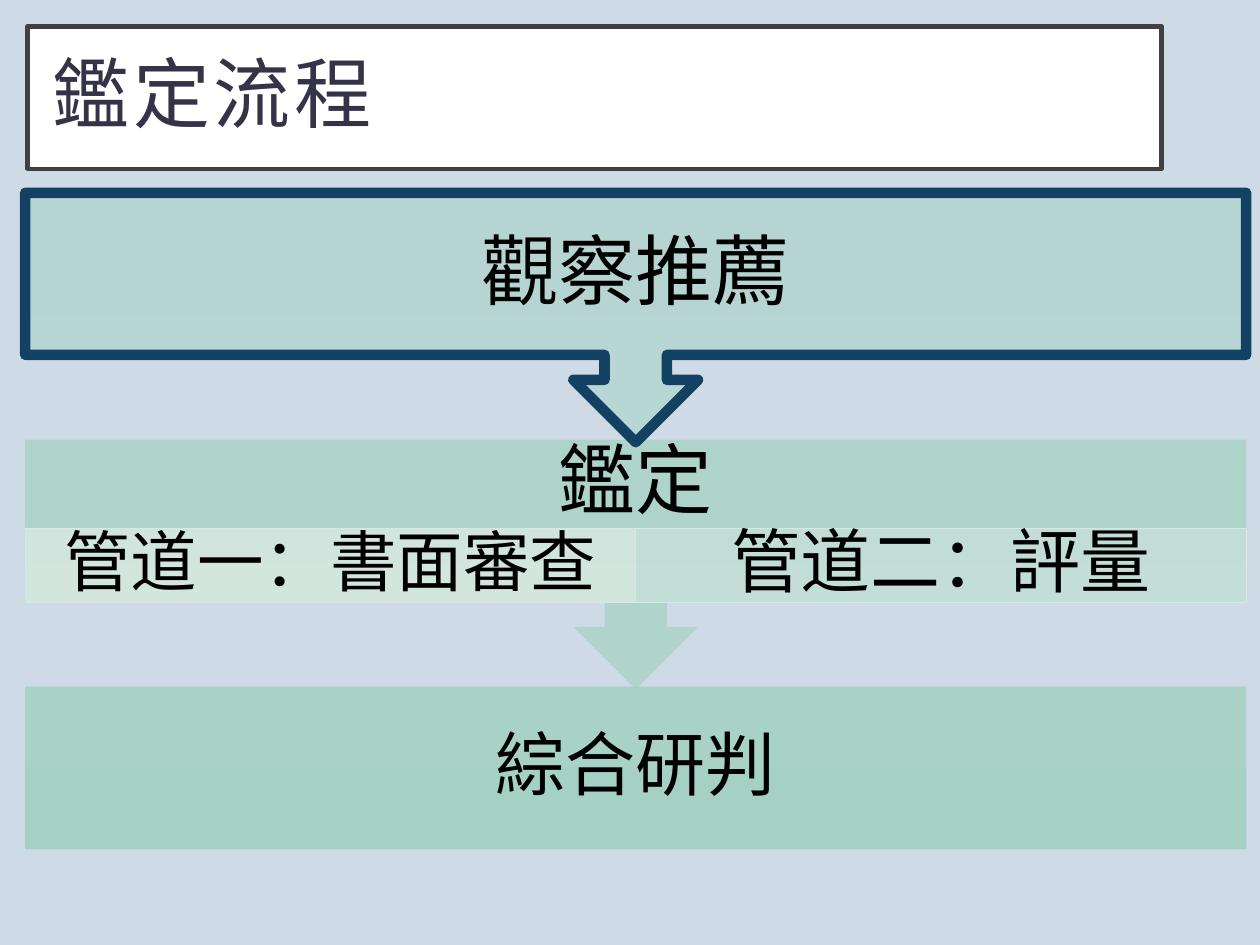
from lxml import etree
from pptx import Presentation
from pptx.dml.color import RGBColor
from pptx.enum import shapes, text
from pptx.oxml import ns
from pptx.util import Inches, Pt

LEFT, WIDTH = 0.2, 9.69
BAND_HEIGHT, CALLOUT_HEIGHT = 1.29, 1.98
STEP = 1.96
FIRST_TOP = 1.53
HALF = WIDTH / 2
GRADIENT = ("A4D2C2", "A0D1C0")
PALE = "D6E8E1"


def rgb(value):
    return RGBColor.from_string(value)


def set_opacity(shape, percent):
    for color in shape.element.spPr.iter(ns.qn("a:srgbClr")):
        etree.SubElement(color, ns.qn("a:alpha"), val=str(percent * 1000))


def set_outline(shape, color, width):
    shape.line.color.rgb = rgb(color)
    shape.line.width = Pt(width)


def add_block(slide, kind, place, colors, opacity=100):
    shape = slide.shapes.add_shape(kind, *map(Inches, place))
    shape.shadow.inherit = False
    if len(colors) == 1:
        shape.fill.solid()
        shape.fill.fore_color.rgb = rgb(colors[0])
    else:
        shape.fill.gradient()
        shape.fill.gradient_angle = 270
        for stop, color in zip(shape.fill.gradient_stops, colors):
            stop.color.rgb = rgb(color)
    shape.line.fill.background()
    if opacity < 100:
        set_opacity(shape, opacity)
    return shape


def add_callout(slide, top, opacity):
    place = (LEFT, top, WIDTH, CALLOUT_HEIGHT)
    callout = add_block(slide, shapes.MSO_SHAPE.UP_ARROW_CALLOUT, place, GRADIENT, opacity)
    callout.rotation = 180
    return callout


def write(box, words, size, side, edge, font="Arial", color="000000",
          align=text.PP_ALIGN.CENTER):
    frame = box.text_frame
    frame.text = words
    frame.word_wrap = True
    frame.vertical_anchor = text.MSO_ANCHOR.MIDDLE
    frame.margin_left = frame.margin_right = Inches(side)
    frame.margin_top = frame.margin_bottom = Inches(edge)
    para = frame.paragraphs[0]
    para.alignment = align
    para.line_spacing = 0.9
    span = para.runs[0]
    span.font.size = Pt(size)
    span.font.name = font
    span.font.color.rgb = rgb(color)
    return span


def add_label(slide, words, place, size, side, edge):
    box = slide.shapes.add_textbox(*map(Inches, place))
    write(box, words, size, side, edge)


def add_title(slide, words):
    box = add_block(slide, shapes.MSO_SHAPE.RECTANGLE, (0.22, 0.21, 9, 1.13), ["FFFFFF"])
    set_outline(box, "404040", 2.5)
    span = write(box, words, 44, 0.2, 0.2, "Cabin", "353347", text.PP_ALIGN.LEFT)
    span.font._element.set("spc", "200")


def add_channel(slide, column, words, size, edge, opacity):
    place = (LEFT + column * HALF, 4.19, HALF, 0.59)
    box = add_block(slide, shapes.MSO_SHAPE.RECTANGLE, place, [PALE], opacity)
    set_outline(box, PALE, 0.5)
    add_label(slide, words, place, size, 0.3, edge)


def main():
    deck = Presentation()
    deck.slide_width, deck.slide_height = Inches(10), Inches(7.5)
    slide = deck.slides.add_slide(deck.slide_layouts[6])
    slide.background.fill.solid()
    slide.background.fill.fore_color.rgb = rgb("CEDBE6")

    add_title(slide, "鑑定流程")
    watch_top, assess_top, judge_top = (FIRST_TOP + STEP * row for row in range(3))

    judge_place = (LEFT, judge_top, WIDTH, BAND_HEIGHT)
    add_block(slide, shapes.MSO_SHAPE.RECTANGLE, judge_place, GRADIENT, 90)
    add_label(slide, "綜合研判", judge_place, 40, 0.31, 0.31)

    add_callout(slide, assess_top, 70)
    add_label(slide, "鑑定", (LEFT, assess_top, WIDTH, 0.7), 44, 0.34, 0.34)
    add_channel(slide, 0, "管道一：書面審查", 38, 0.05, 90)
    add_channel(slide, 1, "管道二：評量", 40, 0.06, 50)

    watch = add_callout(slide, watch_top, 50)
    set_outline(watch, "134163", 6)
    etree.SubElement(watch.line._ln, ns.qn("a:round"))
    add_label(slide, "觀察推薦", (LEFT, watch_top, WIDTH, BAND_HEIGHT), 44, 0.34, 0.34)

    deck.save("out.pptx")


if __name__ == "__main__":
    main()
